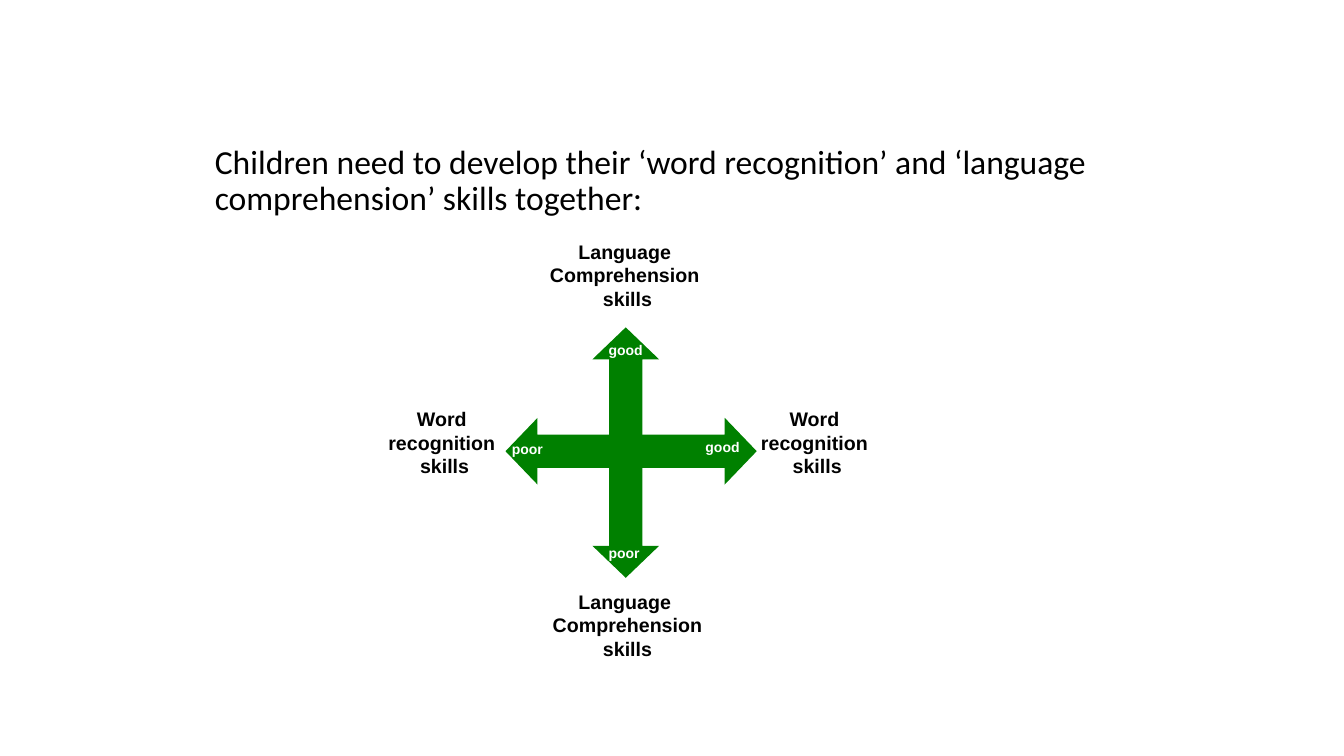
from dataclasses import dataclass

from lxml import etree
from pptx import Presentation
from pptx.dml.color import RGBColor
from pptx.enum.shapes import MSO_SHAPE
from pptx.enum.text import MSO_ANCHOR, MSO_AUTO_SIZE, PP_ALIGN
from pptx.oxml.ns import qn
from pptx.shapes.group import GroupShape
from pptx.slide import Slide
from pptx.util import Cm, Pt

UP = MSO_SHAPE.UP_ARROW
TOP = MSO_ANCHOR.TOP
FIT, FIXED = MSO_AUTO_SIZE.SHAPE_TO_FIT_TEXT, MSO_AUTO_SIZE.NONE
LEFT, CENTER = PP_ALIGN.LEFT, PP_ALIGN.CENTER

GREEN, WHITE, BLACK = "008000", "FFFFFF", "000000"
WIDE, LONG = 1.68, 3.18
INTRO = ("Children need to develop their ‘word recognition’ "
         "and ‘language comprehension’ skills together:")


@dataclass
class Arrow:
    """Centre in centimetres and turn in degrees."""
    x: float
    y: float
    turn: int


@dataclass
class Label:
    """Text lines with their box in centimetres."""
    lines: tuple[str, ...]
    x: float
    y: float
    width: float


ARROWS = [
    Arrow(15.77, 9.84, 0),
    Arrow(15.77, 12.97, 180),
    Arrow(14.33, 11.37, 270),
    Arrow(17.48, 11.37, 90),
]
WORD = ("Word ", "recognition ", "skills")
RATINGS = [
    Label(("good",), 15.09, 8.48, 1.37),
    Label(("good",), 17.53, 10.92, 1.37),
    Label(("poor",), 15.09, 13.59, 1.3),
    Label(("poor",), 12.65, 10.97, 1.3),
]
SKILLS = [
    Label(WORD, 18.92, 10.13, 3.35),
    Label(WORD, 9.53, 10.13, 3.35),
    Label(("Language ", "Comprehension", "skills"), 13.67, 14.73, 4.29),
    Label(("Language ", "Comprehension ", "skills"), 13.59, 5.92, 4.45),
]


def paint(code: str) -> RGBColor:
    return RGBColor.from_string(code)


def add_run(para, text: str, face: str, size: int, code: str, bold: bool) -> None:
    run = para.add_run()
    run.text = text
    font = run.font
    font.name, font.size, font.bold = face, Pt(size), bold
    font.color.rgb = paint(code)


def add_intro(slide: Slide) -> None:
    body = slide.placeholders[1]
    body.left, body.top = Cm(4.52), Cm(3.53)
    body.width, body.height = Cm(24.77), Cm(2.59)
    frame = body.text_frame
    frame.auto_size, frame.vertical_anchor = FIXED, TOP
    para = frame.paragraphs[0]
    props = para._p.get_or_add_pPr()
    props.set("marL", str(Cm(0.64)))
    props.set("indent", "0")
    etree.SubElement(props, qn("a:buNone"))
    para.alignment, para.line_spacing, para.space_before = LEFT, 0.9, Pt(0)
    add_run(para, INTRO, "Calibri", 24, BLACK, False)


def add_arrow(cross: GroupShape, arrow: Arrow) -> None:
    shape = cross.shapes.add_shape(UP, Cm(arrow.x - WIDE / 2),
                                   Cm(arrow.y - LONG / 2), Cm(WIDE), Cm(LONG))
    shape.rotation = arrow.turn
    shape.adjustments[0], shape.adjustments[1] = 0.5, 0.48
    shape.shadow.inherit = False
    shape.fill.solid()
    shape.fill.fore_color.rgb = paint(GREEN)
    shape.line.fill.background()


def add_label(cross: GroupShape, label: Label, high: float, size: int,
              code: str, align: PP_ALIGN) -> None:
    box = cross.shapes.add_textbox(Cm(label.x), Cm(label.y),
                                   Cm(label.width), Cm(high))
    frame = box.text_frame
    frame.word_wrap, frame.auto_size = False, FIT
    for index, line in enumerate(label.lines):
        para = frame.add_paragraph() if index else frame.paragraphs[0]
        para.alignment = align
        add_run(para, line, "Arial", size, code, True)


def main() -> None:
    deck = Presentation()
    deck.slide_width, deck.slide_height = Cm(33.87), Cm(19.05)
    slide = deck.slides.add_slide(deck.slide_layouts[1])
    title = slide.shapes.title.element
    title.getparent().remove(title)
    add_intro(slide)
    cross = slide.shapes.add_group_shape()
    for arrow in ARROWS:
        add_arrow(cross, arrow)
    for label in RATINGS:
        add_label(cross, label, 0.69, 10, WHITE, LEFT)
    for label in SKILLS:
        add_label(cross, label, 2.06, 14, BLACK, CENTER)
    deck.save("out.pptx")


if __name__ == "__main__":
    main()
